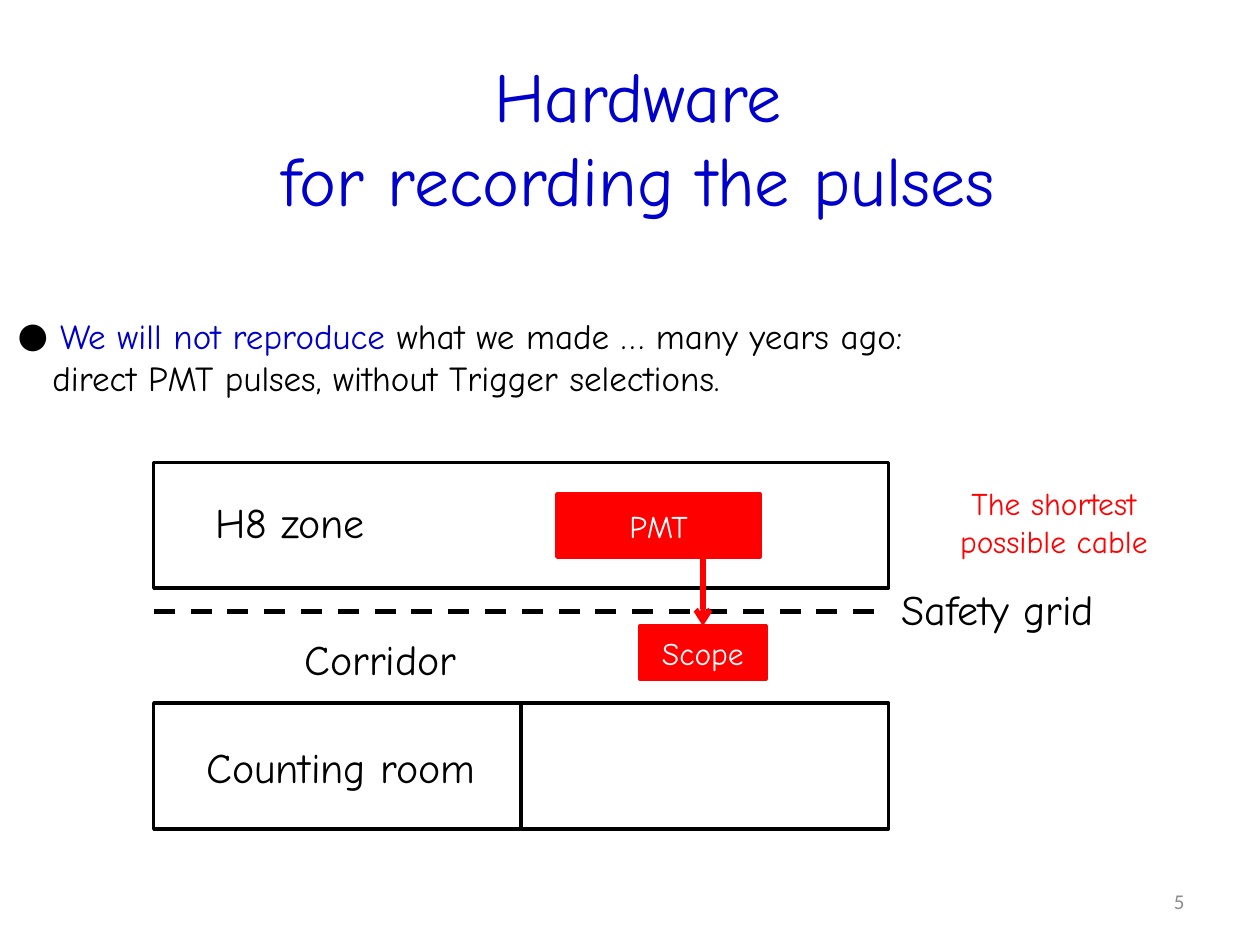
"""Builds the slide about the hardware for recording the pulses."""
from lxml.etree import SubElement
from pptx import Presentation
from pptx.dml.color import RGBColor
from pptx.enum.dml import MSO_LINE
from pptx.enum.shapes import MSO_CONNECTOR, MSO_SHAPE
from pptx.enum.text import MSO_ANCHOR, MSO_AUTO_SIZE, PP_ALIGN
from pptx.oxml.ns import qn
from pptx.util import Cm, Pt

BLACK, BLUE, RED, WHITE, GREY = "000000", "0000CC", "FF0000", "FFFFFF", "8C8C8C"


def rgb(color):
    return RGBColor.from_string(color)


def style(tf, size, color, align=PP_ALIGN.LEFT, font="Comic Neue"):
    for p in tf.paragraphs:
        p.alignment = align
        p.space_before = Pt(0)
        for r in p.runs:
            r.font.size, r.font.name = Pt(size), font
            r.font.color.rgb = rgb(color)


prs = Presentation()
prs.slide_width, prs.slide_height = Cm(25.4), Cm(19.05)
s = prs.slides.add_slide(prs.slide_layouts[1])
title, body = s.placeholders

title.left, title.top, title.width, title.height = Cm(1.24), Cm(0.91), Cm(23.24), Cm(3.68)
title.text_frame.text = "Hardware\nfor recording the pulses"
title.text_frame.auto_size = MSO_AUTO_SIZE.NONE
style(title.text_frame, 40, BLUE, PP_ALIGN.CENTER)

body.left, body.top, body.width, body.height = Cm(0.1), Cm(6.22), Cm(19.48), Cm(1.96)
tf = body.text_frame
tf.auto_size = MSO_AUTO_SIZE.NONE
tf.word_wrap = False
first, second = tf.paragraphs[0], tf.add_paragraph()
first.add_run().text = "We will not reproduce "
first.add_run().text = "what we made … many years ago:"
second.text = "direct PMT pulses, without Trigger selections."
style(tf, 20, BLACK)
first.runs[0].font.color.rgb = rgb(BLUE)
pPr = first._p.get_or_add_pPr()
pPr.set("marL", str(Cm(0.86)))
pPr.set("indent", str(-Cm(0.86)))
SubElement(SubElement(pPr, qn("a:buClr")), qn("a:srgbClr"), val=BLACK)
SubElement(pPr, qn("a:buFont"), typeface="Comic Neue")
SubElement(pPr, qn("a:buChar"), char="●")
pPr = second._p.get_or_add_pPr()
pPr.set("marL", str(Cm(0.7)))
pPr.set("indent", "0")
SubElement(pPr, qn("a:buNone"))

boxes = []
for text, x, y, w, h, fill, line in [
    ("", 3.1, 9.32, 14.81, 2.54, None, BLACK),
    ("", 3.1, 14.17, 14.81, 2.54, None, BLACK),
    ("PMT", 11.23, 9.96, 4.09, 1.27, RED, RED),
    ("Scope", 12.9, 12.62, 2.54, 1.07, RED, RED),
]:
    sp = s.shapes.add_shape(MSO_SHAPE.RECTANGLE, Cm(x), Cm(y), Cm(w), Cm(h))
    sp.shadow.inherit = False
    if fill:
        sp.fill.solid()
        sp.fill.fore_color.rgb = rgb(fill)
    else:
        sp.fill.background()
    sp.line.color.rgb = rgb(line)
    sp.line.width = Pt(2)
    sp.text_frame.text = text
    sp.text_frame.vertical_anchor = MSO_ANCHOR.MIDDLE
    style(sp.text_frame, 18, WHITE, PP_ALIGN.CENTER)
    boxes.append(sp)
zone, room, pmt, scope = boxes

lines = []
for x1, y1, x2, y2, color, width in [
    (3.1, 12.32, 17.91, 12.32, BLACK, 3),
    (14.17, 11.23, 14.17, 12.62, RED, 3),
    (10.5, 14.17, 10.5, 16.71, BLACK, 2.25),
]:
    line = s.shapes.add_connector(MSO_CONNECTOR.STRAIGHT, Cm(x1), Cm(y1), Cm(x2), Cm(y2))
    line.line.color.rgb = rgb(color)
    line.line.width = Pt(width)
    SubElement(line._element.spPr, qn("a:effectLst"))
    lines.append(line)
grid, cable, wall = lines
grid.line.dash_style = MSO_LINE.DASH
cable.end_connect(scope, 0)
SubElement(cable.line._get_or_add_ln(), qn("a:tailEnd"), type="arrow")
wall.begin_connect(room, 0)
wall.end_connect(room, 2)

for text, x, y, w, h, size, color, align in [
    ("H8 zone", 4.09, 9.88, 3.76, 1.27, 24, BLACK, PP_ALIGN.LEFT),
    ("Counting room", 3.91, 14.83, 6.15, 1.27, 24, BLACK, PP_ALIGN.LEFT),
    ("Safety grid", 17.93, 11.63, 5.16, 1.27, 24, BLACK, PP_ALIGN.LEFT),
    ("Corridor", 5.89, 12.65, 3.91, 1.27, 24, BLACK, PP_ALIGN.LEFT),
    ("The shortest\npossible cable", 18.92, 9.63, 4.65, 1.8, 18, RED, PP_ALIGN.CENTER),
]:
    tf = s.shapes.add_textbox(Cm(x), Cm(y), Cm(w), Cm(h)).text_frame
    tf.word_wrap = False
    tf.text = text
    style(tf, size, color, align)

tf = s.shapes.add_textbox(Cm(18.21), Cm(17.65), Cm(5.92), Cm(1.02)).text_frame
tf.word_wrap = True
tf.vertical_anchor = MSO_ANCHOR.MIDDLE
tf.text = "5"
style(tf, 12, GREY, PP_ALIGN.RIGHT, "Calibri")

prs.save("out.pptx")
